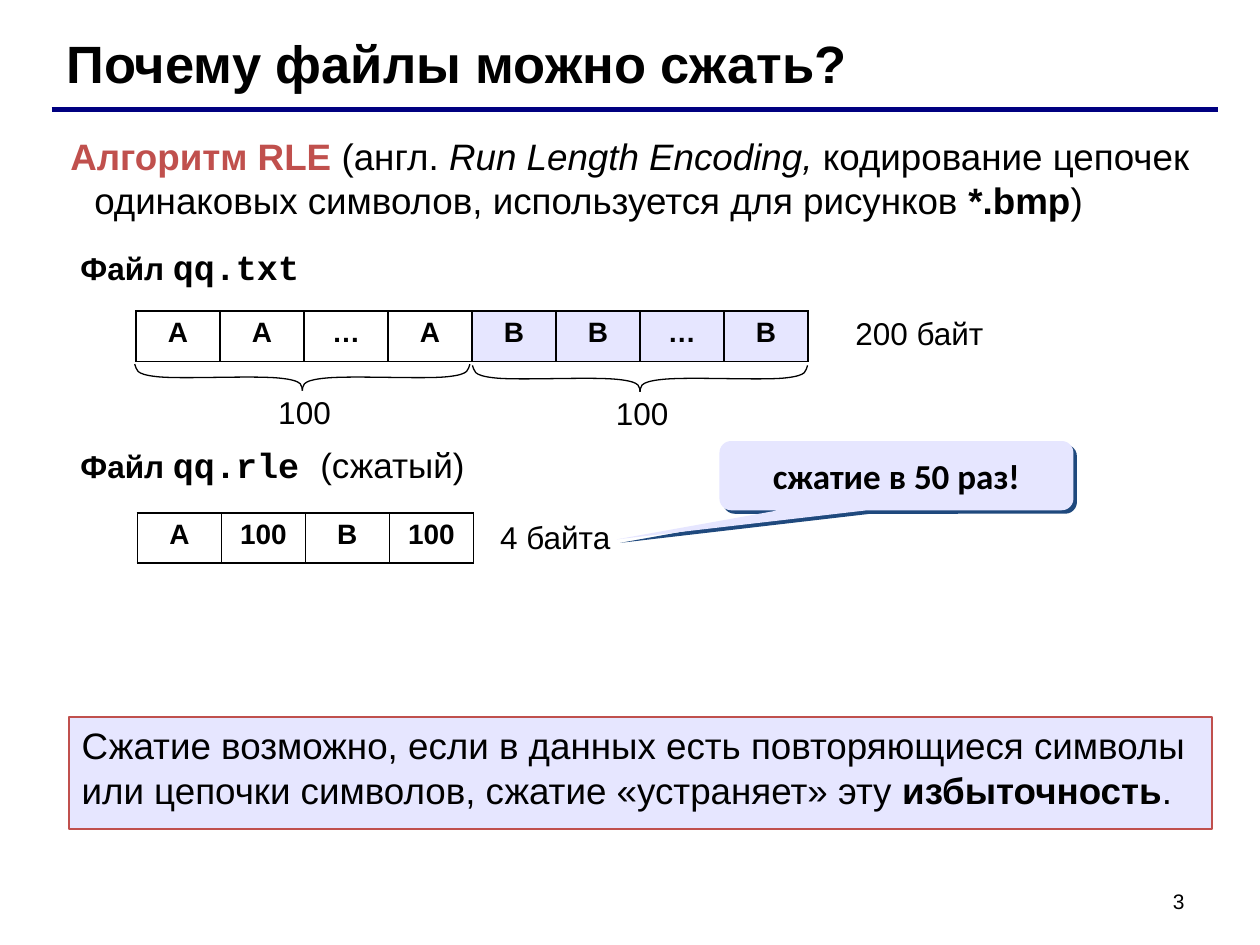
"""Build the slide that explains run-length encoding."""
import lxml.etree
import pptx
import pptx.dml.color
import pptx.enum.shapes
import pptx.enum.text
import pptx.oxml
import pptx.oxml.ns
import pptx.util

Inches, Pt = pptx.util.Inches, pptx.util.Pt
RGBColor = pptx.dml.color.RGBColor
ALIGN = pptx.enum.text.PP_ALIGN
ANCHOR = pptx.enum.text.MSO_ANCHOR
SHAPE = pptx.enum.shapes.MSO_SHAPE

BLACK = RGBColor(0x00, 0x00, 0x00)
NAVY = RGBColor(0x00, 0x00, 0x80)
RED = RGBColor(0xC0, 0x50, 0x4D)
LAVENDER = RGBColor(0xE6, 0xE6, 0xFF)
SHADOW = RGBColor(0x1F, 0x49, 0x7D)

BOLD, ITALIC = {"bold": True}, {"italic": True}
MONO = {"bold": True, "size": 20, "name": "Courier New"}

TITLE = [("Почему файлы можно сжать?", {"bold": True, "size": 30})]
DEFINITION = [
    ("Алгоритм RLE ", {"bold": True, "color": RED}),
    ("(англ. ", {}),
    ("Run Length Encoding, ", ITALIC),
    ("кодирование цепочек одинаковых символов, используется для рисунков ", {}),
    ("*.bmp", BOLD),
    (")", {}),
]
LABELS = [
    ((2.11, 3.07, 0.62, 0.4), [("100", {})]),
    ((4.79, 3.08, 0.62, 0.4), [("100", {})]),
    ((6.69, 2.44, 1.23, 0.4), [("200 байт", {})]),
    ((3.87, 4.06, 1.08, 0.4), [("4 байта", {})]),
    ((0.54, 1.9, 1.94, 0.43), [("Файл ", BOLD), ("qq.txt", MONO)]),
    ((0.54, 3.47, 3.25, 0.43),
     [("Файл ", BOLD), ("qq.rle ", MONO), ("(сжатый)", {"size": 20})]),
]
TABLES = [
    (1.08, 2.47, ["A", "A", "…", "A", "B", "B", "…", "B"], range(4, 8)),
    (1.09, 4.07, ["A", "100", "B", "100"], ()),
]
CALLOUT = [("сжатие в 50 раз!", {"bold": True, "size": 20, "name": "Calibri"})]
CONCLUSION = [
    ("Сжатие возможно, если в данных есть повторяющиеся символы "
     "или цепочки символов, сжатие «устраняет» эту ", {}),
    ("избыточность", BOLD),
    (".", {}),
]
BRACE_TIPS = [(2.4, 3.1), (5.08, 3.11)]
BRACE_HALF = [
    (-1.33, -0.21), (-1.31, -0.17), (-1.34, -0.13), (-1.15, -0.11),
    (-0.96, -0.09), (-0.41, -0.12), (-0.19, -0.1),
    (0.03, -0.08), (-0.01, -0.03), (0, 0),
]
CELL_WIDTH, CELL_HEIGHT = 2 / 3, 0.4


def write_runs(paragraph, runs, size, align=ALIGN.LEFT):
    paragraph.alignment = align
    for text, style in runs:
        run = paragraph.add_run()
        run.text = text
        run.font.name = style.get("name", "Arial")
        run.font.size = Pt(style.get("size", size))
        run.font.bold = style.get("bold", False)
        run.font.italic = style.get("italic", False)
        run.font.color.rgb = style.get("color", BLACK)


def add_text(slide, box, runs, size=18, wrap=False, align=ALIGN.LEFT):
    frame = slide.shapes.add_textbox(*map(Inches, box)).text_frame
    frame.word_wrap = wrap
    frame.auto_size = pptx.enum.text.MSO_AUTO_SIZE.SHAPE_TO_FIT_TEXT
    write_runs(frame.paragraphs[0], runs, size, align)
    return frame


def add_panel(slide, kind, box, runs, size, align, anchor):
    shape = slide.shapes.add_shape(kind, *map(Inches, box))
    shape.shadow.inherit = False
    shape.fill.solid()
    shape.fill.fore_color.rgb = LAVENDER
    shape.text_frame.word_wrap = True
    shape.text_frame.vertical_anchor = anchor
    write_runs(shape.text_frame.paragraphs[0], runs, size, align)
    return shape


def add_rule(slide, left, right, top):
    rule = slide.shapes.add_connector(
        pptx.enum.shapes.MSO_CONNECTOR.STRAIGHT,
        Inches(left), Inches(top), Inches(right), Inches(top))
    rule.line.color.rgb = NAVY
    rule.line.width = Pt(3)
    lxml.etree.SubElement(rule._element.spPr, pptx.oxml.ns.qn("a:effectLst"))


def border_cell(cell):
    properties = cell._tc.get_or_add_tcPr()
    for position, side in enumerate(("lnL", "lnR", "lnT", "lnB")):
        properties.insert(position, pptx.oxml.parse_xml(
            f'<a:{side} {pptx.oxml.ns.nsdecls("a")} w="{Pt(1)}">'
            f'<a:solidFill><a:srgbClr val="{BLACK}"/></a:solidFill></a:{side}>'))


def add_byte_table(slide, left, top, symbols, shaded):
    table = slide.shapes.add_table(
        1, len(symbols), Inches(left), Inches(top),
        Inches(CELL_WIDTH * len(symbols)), Inches(CELL_HEIGHT)).table
    table.first_row = table.horz_banding = False
    for column, symbol in enumerate(symbols):
        table.columns[column].width = Inches(CELL_WIDTH)
        cell = table.cell(0, column)
        if column in shaded:
            cell.fill.solid()
            cell.fill.fore_color.rgb = LAVENDER
        else:
            cell.fill.background()
        border_cell(cell)
        write_runs(cell.text_frame.paragraphs[0], [(symbol, BOLD)], 16, ALIGN.CENTER)


def bend_segments(shape):
    qualified = pptx.oxml.ns.qn
    segments = list(shape._element.iter(qualified("a:lnTo")))
    outline = segments[0].getparent()
    for start in range(0, len(segments), 3):
        curve = lxml.etree.SubElement(outline, qualified("a:cubicBezTo"))
        for segment in segments[start:start + 3]:
            curve.append(segment[0])
            outline.remove(segment)


def add_brace(slide, tip_x, tip_y):
    group = slide.shapes.add_group_shape()
    for side in (1, -1):
        points = [(Inches(tip_x + side * x), Inches(tip_y + y)) for x, y in BRACE_HALF]
        builder = group.shapes.build_freeform(*points[0])
        builder.add_line_segments(points[1:], close=False)
        half = builder.convert_to_shape()
        bend_segments(half)
        half.shadow.inherit = False
        half.fill.background()
        half.line.color.rgb = BLACK
        half.line.width = Pt(0.75)


def add_callout(slide):
    callout = add_panel(slide, SHAPE.ROUNDED_RECTANGULAR_CALLOUT,
                        (5.71, 3.5, 2.81, 0.55), CALLOUT, 20, ALIGN.CENTER, ANCHOR.MIDDLE)
    callout.line.fill.background()
    for index, value in enumerate((-0.79, 0.92, 0.17)):
        callout.adjustments[index] = value
    effects = callout._element.spPr.find(pptx.oxml.ns.qn("a:effectLst"))
    effects.append(pptx.oxml.parse_xml(
        f'<a:outerShdw {pptx.oxml.ns.nsdecls("a")} dist="{Pt(2.8)}" dir="2700000" '
        f'algn="ctr" rotWithShape="0"><a:srgbClr val="{SHADOW}"/></a:outerShdw>'))


def main():
    presentation = pptx.Presentation()
    presentation.slide_width, presentation.slide_height = Inches(10), Inches(7.5)
    slide = presentation.slides.add_slide(presentation.slide_layouts[6])

    number = add_text(slide, (7.17, 6.95, 2.33, 0.4), [("3", {})], 12, True, ALIGN.RIGHT)
    number.auto_size = pptx.enum.text.MSO_AUTO_SIZE.NONE
    number.vertical_anchor = ANCHOR.MIDDLE
    add_rule(slide, 0.41, 9.67, 0.87)
    add_text(slide, (0.43, 0.2, 8.9, 0.6), TITLE, wrap=True)
    definition = add_text(slide, (0.46, 1.01, 9.17, 0.8), DEFINITION, 21, True)
    indent = definition.paragraphs[0]._p.get_or_add_pPr()
    indent.set("marL", str(Inches(0.19)))
    indent.set("indent", str(-Inches(0.19)))

    for table in TABLES:
        add_byte_table(slide, *table)
    for tip in BRACE_TIPS:
        add_brace(slide, *tip)
    for box, runs in LABELS:
        add_text(slide, box, runs)
    add_callout(slide)
    conclusion = add_panel(slide, SHAPE.RECTANGLE, (0.55, 5.69, 9.07, 0.89),
                           CONCLUSION, 21, ALIGN.LEFT, ANCHOR.TOP)
    conclusion.line.color.rgb = RED
    conclusion.line.width = Pt(1)
    presentation.save("out.pptx")


if __name__ == "__main__":
    main()
